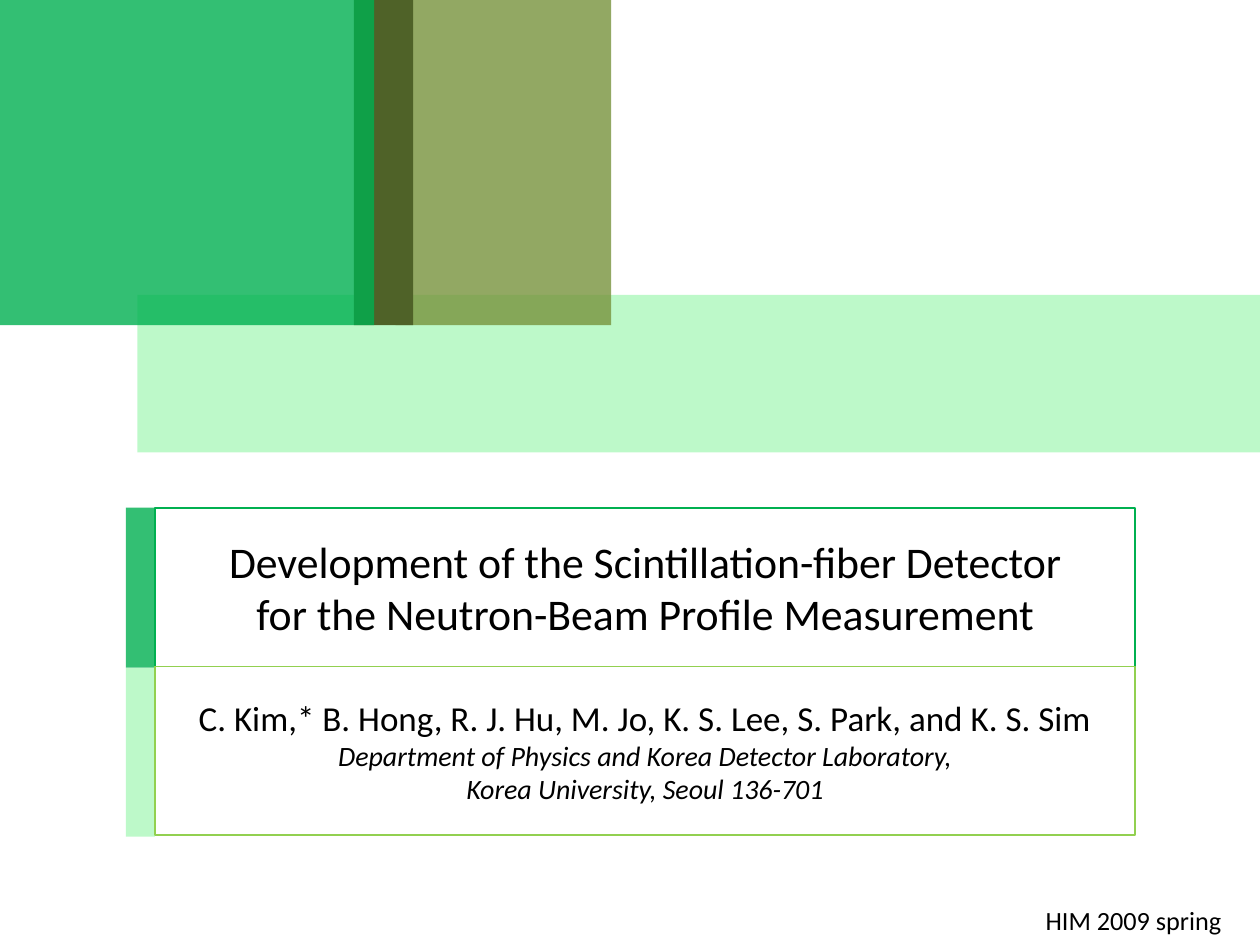
"""Build the title slide of a talk on a scintillation-fiber detector."""
from dataclasses import dataclass

import lxml.etree
import pptx
import pptx.dml.color
import pptx.enum.shapes
import pptx.enum.text
import pptx.oxml.ns
import pptx.util

Inches = pptx.util.Inches


@dataclass(frozen=True)
class Theme:
    font: str = "Calibri"
    text: str = "000000"
    green: str = "00B050"
    mint: str = "7DF594"
    lime: str = "92D050"
    olive: str = "77933C"
    dark_olive: str = "4F6228"
    title_size: float = 25
    author_size: float = 20
    affiliation_size: float = 16
    footer_size: float = 15
    line_width: float = 1


class SlideBuilder:
    def __init__(self, slide, theme):
        self.slide = slide
        self.theme = theme

    def color(self, value):
        return pptx.dml.color.RGBColor.from_string(value)

    def rectangle(self, left, top, width, height):
        shape = self.slide.shapes.add_shape(
            pptx.enum.shapes.MSO_SHAPE.RECTANGLE,
            Inches(left), Inches(top), Inches(width), Inches(height))
        shape.shadow.inherit = False
        return shape

    def block(self, left, top, width, height, color, opacity=100):
        shape = self.rectangle(left, top, width, height)
        shape.fill.solid()
        shape.fill.fore_color.rgb = self.color(color)
        shape.line.fill.background()
        if opacity < 100:
            fill_color = shape.element.spPr.find(".//" + pptx.oxml.ns.qn("a:srgbClr"))
            alpha = lxml.etree.SubElement(fill_color, pptx.oxml.ns.qn("a:alpha"))
            alpha.set("val", str(opacity * 1000))

    def outline(self, shape, color):
        shape.fill.background()
        shape.line.color.rgb = self.color(color)
        shape.line.width = pptx.util.Pt(self.theme.line_width)

    def add_lines(self, shape, lines, alignment=pptx.enum.text.PP_ALIGN.CENTER):
        frame = shape.text_frame
        frame.word_wrap = True
        for index, (text, size, italic) in enumerate(lines):
            paragraph = frame.add_paragraph() if index else frame.paragraphs[0]
            paragraph.alignment = alignment
            run = paragraph.add_run()
            run.text = text
            run.font.name = self.theme.font
            run.font.size = pptx.util.Pt(size)
            run.font.italic = italic
            run.font.color.rgb = self.color(self.theme.text)

    def framed_text(self, shape, color, lines):
        self.outline(shape, color)
        shape.text_frame.vertical_anchor = pptx.enum.text.MSO_ANCHOR.MIDDLE
        self.add_lines(shape, lines)

    def title(self, left, top, width, height, color, lines):
        shape = self.slide.shapes.title
        shape.left, shape.top = Inches(left), Inches(top)
        shape.width, shape.height = Inches(width), Inches(height)
        self.framed_text(shape, color, lines)

    def panel(self, left, top, width, height, color, lines):
        self.framed_text(self.rectangle(left, top, width, height), color, lines)

    def label(self, left, top, width, height, lines):
        shape = self.slide.shapes.add_textbox(
            Inches(left), Inches(top), Inches(width), Inches(height))
        self.add_lines(shape, lines, pptx.enum.text.PP_ALIGN.LEFT)


def main():
    presentation = pptx.Presentation()
    presentation.slide_width, presentation.slide_height = Inches(10), Inches(7.5)
    slide = presentation.slides.add_slide(presentation.slide_layouts[5])
    theme = Theme()
    builder = SlideBuilder(slide, theme)

    banner_height = 2.58
    builder.block(1.09, 2.34, 8.91, 1.25, theme.mint, 50)
    builder.block(3.14, 0, 1.71, banner_height, theme.olive, 80)
    builder.block(2.81, 0, 0.47, banner_height, theme.dark_olive)
    builder.block(0, 0, 2.97, banner_height, theme.green, 80)

    builder.label(8.2, 7.13, 1.72, 0.35,
                  [("HIM 2009 spring", theme.footer_size, False)])

    tab_left, tab_width, panel_width = 1, 0.23, 7.78
    panel_left = tab_left + tab_width
    builder.block(tab_left, 4.03, tab_width, 1.27, theme.green, 80)
    builder.title(panel_left, 4.03, panel_width, 1.26, theme.green, [
        ("Development of the Scintillation-fiber Detector", theme.title_size, False),
        ("for the Neutron-Beam Profile Measurement", theme.title_size, False),
    ])
    builder.block(tab_left, 5.3, tab_width, 1.34, theme.mint, 50)
    builder.panel(panel_left, 5.29, panel_width, 1.34, theme.lime, [
        ("C. Kim,* B. Hong, R. J. Hu, M. Jo, K. S. Lee, S. Park, and K. S. Sim",
         theme.author_size, False),
        ("Department of Physics and Korea Detector Laboratory,",
         theme.affiliation_size, True),
        ("Korea University, Seoul 136-701", theme.affiliation_size, True),
    ])
    presentation.save("out.pptx")


if __name__ == "__main__":
    main()
